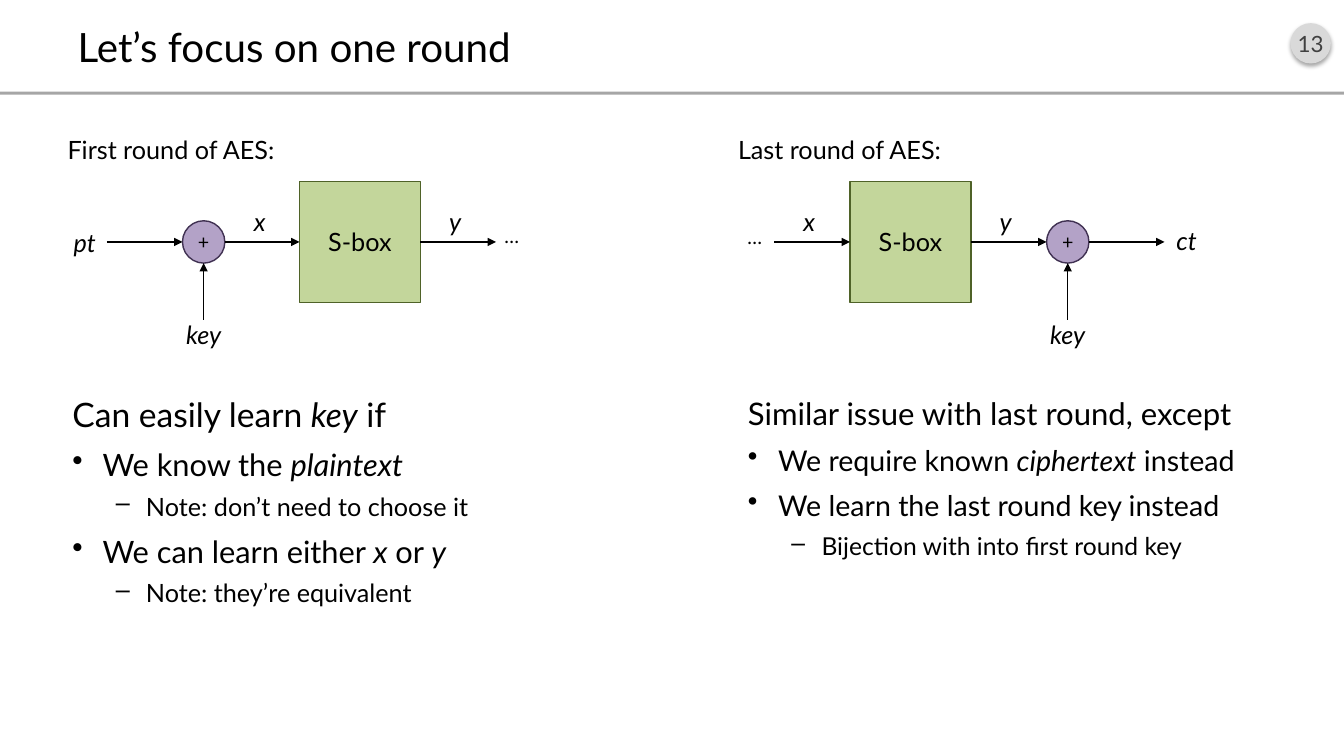
"""Build the slide that compares the first and last rounds of AES."""
from dataclasses import dataclass

from lxml import etree
from pptx import Presentation
from pptx.dml.color import RGBColor
from pptx.enum.shapes import MSO_CONNECTOR, MSO_SHAPE
from pptx.enum.text import MSO_ANCHOR, PP_ALIGN
from pptx.oxml.ns import qn
from pptx.util import Emu, Pt

PX = 9144
FONT = "Lato"
LEFT, CENTER = PP_ALIGN.LEFT, PP_ALIGN.CENTER
TOP, MIDDLE = MSO_ANCHOR.TOP, MSO_ANCHOR.MIDDLE
RECT, OVAL = MSO_SHAPE.RECTANGLE, MSO_SHAPE.OVAL
STRAIGHT = MSO_CONNECTOR.STRAIGHT
COLORS = {
    "ink": "000000", "badge": "D9D9D9", "number": "404040", "rule": "A6A6A6",
    "add": "B3A2C7", "add edge": "403152", "box": "C3D69B", "box edge": "4F6228",
}
AXIS, GAP, ADD, BOX = 240, 75, 42, 120
BULLETS = ("", "•", "–")
MARGINS = (0, 30, 73)
SPACES = (8, 8, 6)


@dataclass
class Area:
    x: int
    y: int
    w: int
    h: int


@dataclass
class Label:
    text: str
    area: Area
    size: float = 18
    italic: bool = False
    align: PP_ALIGN = CENTER
    anchor: MSO_ANCHOR = MIDDLE


@dataclass
class Flow:
    add: int
    box: int
    labels: list[Label]


@dataclass
class Notes:
    area: Area
    sizes: tuple[float, float, float]
    lines: list[tuple[int, str]]


FLOWS = [
    Flow(181, 297, [
        Label("First round of AES:", Area(67, 136, 231, 24), align=LEFT),
        Label("pt", Area(61, 229, 46, 24), italic=True),
        Label("…", Area(491, 222, 33, 24), 14, anchor=TOP),
    ]),
    Flow(1038, 843, [
        Label("Last round of AES:", Area(732, 136, 231, 24), align=LEFT),
        Label("…", Area(732, 223, 33, 24), 14, anchor=TOP),
        Label("ct", Area(1154, 227, 46, 24), italic=True),
    ]),
]
NOTES = [
    Notes(Area(62, 386, 463, 250), (24, 22, 18), [
        (0, "Can easily learn *key* if"),
        (1, "We know the *plaintext*"),
        (2, "Note: don’t need to choose it"),
        (1, "We can learn either *x* or *y*"),
        (2, "Note: they’re equivalent"),
    ]),
    Notes(Area(732, 386, 535, 182), (22.2, 20.4, 17.6), [
        (0, "Similar issue with last round, except"),
        (1, "We require known *ciphertext* instead"),
        (1, "We learn the last round key instead"),
        (2, "Bijection with into first round key"),
    ]),
]


def color(name: str) -> RGBColor:
    return RGBColor.from_string(COLORS[name])


def place(area: Area) -> tuple[Emu, ...]:
    return tuple(Emu(n * PX) for n in (area.x, area.y, area.w, area.h))


def style(font, size: float, ink: str = "ink") -> None:
    font.name, font.size = FONT, Pt(size)
    font.color.rgb = color(ink)


def write(frame, text: str, size: float, ink: str = "ink",
          align: PP_ALIGN = CENTER, anchor: MSO_ANCHOR = MIDDLE):
    frame.margin_left = frame.margin_right = 0
    frame.margin_top = frame.margin_bottom = 0
    frame.word_wrap, frame.vertical_anchor = True, anchor
    line = frame.paragraphs[0]
    line.text, line.alignment = text, align
    style(line.font, size, ink)
    return line


def draw_label(slide, label: Label):
    box = slide.shapes.add_textbox(*place(label.area))
    line = write(box.text_frame, label.text, label.size,
                 align=label.align, anchor=label.anchor)
    line.font.italic = label.italic
    return box


def draw_shape(slide, kind: MSO_SHAPE, area: Area, fill: str, edge: str = ""):
    shape = slide.shapes.add_shape(kind, *place(area))
    shape.shadow.inherit = False
    shape.fill.solid()
    shape.fill.fore_color.rgb = color(fill)
    if edge:
        shape.line.color.rgb = color(edge)
        shape.line.width = Pt(1)
    else:
        shape.line.fill.background()
    return shape


def draw_arrow(slide, start: tuple[int, int], end: tuple[int, int]):
    wire = slide.shapes.add_connector(
        STRAIGHT, *(Emu(n * PX) for n in (*start, *end)))
    wire.line.color.rgb = color("ink")
    wire.line.width = Pt(1)
    props = wire.line._get_or_add_ln()
    etree.SubElement(props, qn("a:tailEnd"), type="triangle")
    etree.SubElement(wire._element.spPr, qn("a:effectLst"))
    return wire


def draw_flow(slide, flow: Flow) -> None:
    for label in flow.labels:
        draw_label(slide, label)
    half = ADD // 2
    ring = draw_shape(slide, OVAL, Area(flow.add, AXIS - half, ADD, ADD),
                      "add", "add edge")
    write(ring.text_frame, "+", 14)
    box = draw_shape(slide, RECT, Area(flow.box, AXIS - BOX // 2, BOX, BOX),
                     "box", "box edge")
    write(box.text_frame, "S-box", 18)
    mid = flow.add + half
    key = draw_label(slide, Label("key", Area(mid - 62, 317, 124, 30), italic=True))
    draw_arrow(slide, (mid, 317), (mid, AXIS + half)).begin_connect(key, 0)

    first, last = sorted([(flow.add, ADD), (flow.box, BOX)])
    stops = [first[0] - GAP, first[0], sum(first), last[0], sum(last), sum(last) + GAP]
    for start, end in zip(stops[::2], stops[1::2]):
        wire = draw_arrow(slide, (start, AXIS), (end, AXIS))
        spot = Area(start + 17, 205, 35, 30)
        if end == flow.box:
            wire.end_connect(box, 1)
            draw_label(slide, Label("x", spot, italic=True))
        elif start == flow.box + BOX:
            wire.begin_connect(box, 3)
            draw_label(slide, Label("y", spot, italic=True))


def draw_notes(slide, notes: Notes) -> None:
    frame = slide.shapes.add_textbox(*place(notes.area)).text_frame
    frame.word_wrap = True
    for row, (depth, text) in enumerate(notes.lines):
        line = frame.add_paragraph() if row else frame.paragraphs[0]
        line.level = max(0, depth - 1)
        line.space_before = Pt(SPACES[depth])
        if depth:
            props = line._p.get_or_add_pPr()
            props.set("marL", str(MARGINS[depth] * PX))
            props.set("indent", str(-30 * PX))
            etree.SubElement(props, qn("a:buChar"), char=BULLETS[depth])
        style(line.font, notes.sizes[depth])
        for turn, part in enumerate(text.split("*")):
            if part:
                run = line.add_run()
                run.text = part
                run.font.italic = turn % 2 == 1


def draw_badge(slide) -> None:
    badge = draw_shape(slide, OVAL, Area(1280, 23, 40, 40), "badge")
    write(badge.text_frame, "13", 16, "number")
    glow = etree.SubElement(
        badge._element.spPr.find(qn("a:effectLst")), qn("a:outerShdw"),
        blurRad=str(Pt(3.1)), dist=str(Pt(1.8)), dir="5400000", rotWithShape="0")
    tint = etree.SubElement(glow, qn("a:srgbClr"), val=COLORS["ink"])
    etree.SubElement(tint, qn("a:alpha"), val="35000")


def main() -> None:
    deck = Presentation()
    deck.slide_width, deck.slide_height = Emu(1333 * PX), Emu(750 * PX)
    slide = deck.slides.add_slide(deck.slide_layouts[5])
    draw_badge(slide)
    draw_shape(slide, RECT, Area(0, 91, 1333, 3), "rule")
    title = slide.shapes.title
    title.left, title.top, title.width, title.height = place(Area(67, 16, 1200, 60))
    write(title.text_frame, "Let’s focus on one round", 28.8, align=LEFT)
    title.text_frame.margin_left = Emu(10 * PX)
    for flow in FLOWS:
        draw_flow(slide, flow)
    for notes in NOTES:
        draw_notes(slide, notes)
    deck.save("out.pptx")


if __name__ == "__main__":
    main()
